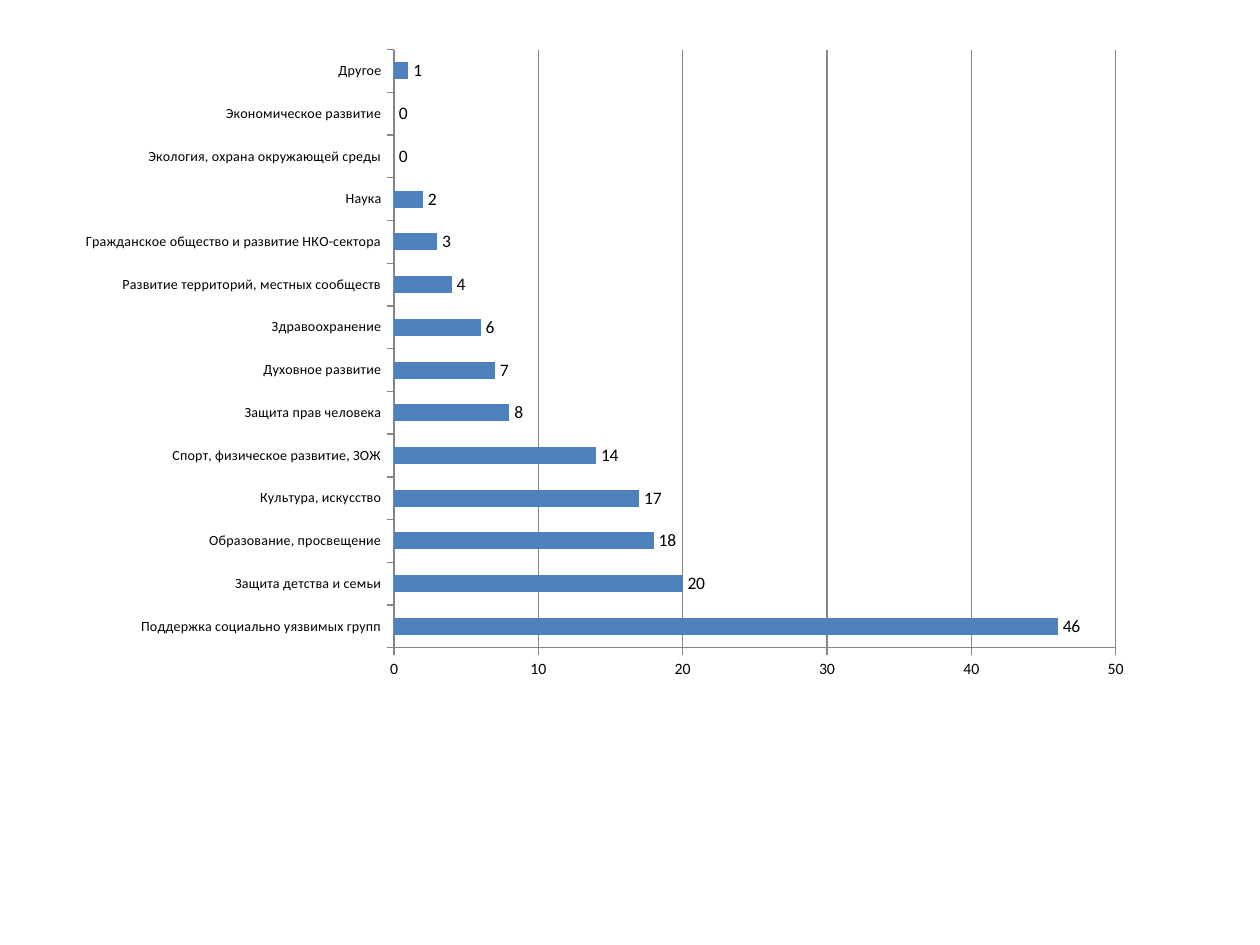
"""Build a slide with a bar chart of NGO activity areas."""
from typing import NamedTuple

from pptx import Presentation
from pptx.chart.data import CategoryChartData
from pptx.dml.color import RGBColor
from pptx.enum import chart as ch
from pptx.util import Inches, Pt

BLACK = RGBColor(0x00, 0x00, 0x00)
GRAY = RGBColor(0x86, 0x86, 0x86)
BLUE = RGBColor(0x4F, 0x81, 0xBD)
FONT = "Calibri"


class Area(NamedTuple):
    label: str
    count: int


AREAS = [
    Area("Поддержка социально уязвимых групп", 46),
    Area("Защита детства и семьи", 20),
    Area("Образование, просвещение", 18),
    Area("Культура, искусство", 17),
    Area("Спорт, физическое развитие, ЗОЖ", 14),
    Area("Защита прав человека", 8),
    Area("Духовное развитие", 7),
    Area("Здравоохранение", 6),
    Area("Развитие территорий, местных сообществ", 4),
    Area("Гражданское общество и развитие НКО-сектора", 3),
    Area("Наука", 2),
    Area("Экология, охрана окружающей среды", 0),
    Area("Экономическое развитие", 0),
    Area("Другое", 1),
]


def style_font(font, size: float) -> None:
    font.name = FONT
    font.size = Pt(size)
    font.bold = False
    font.color.rgb = BLACK


def style_line(line) -> None:
    line.color.rgb = GRAY
    line.width = Pt(0.75)


def style_axis(axis, size: float) -> None:
    axis.major_tick_mark = ch.XL_TICK_MARK.OUTSIDE
    axis.minor_tick_mark = ch.XL_TICK_MARK.NONE
    style_font(axis.tick_labels.font, size)
    style_line(axis.format.line)


def add_area_chart(slide, areas: list[Area]) -> None:
    data = CategoryChartData(number_format="General")
    data.categories = [area.label for area in areas]
    data.add_series("Series 1", [area.count for area in areas])
    chart = slide.shapes.add_chart(
        ch.XL_CHART_TYPE.BAR_CLUSTERED,
        Inches(0.51), Inches(0.29), Inches(8.58), Inches(5.2), data,
    ).chart
    chart.has_title = False
    chart.has_legend = False
    style_font(chart.font, 10)

    style_axis(chart.category_axis, 8)
    counts = chart.value_axis
    style_axis(counts, 9)
    counts.minimum_scale, counts.maximum_scale, counts.major_unit = 0, 50, 10
    counts.has_major_gridlines = True
    style_line(counts.major_gridlines.format.line)

    bars = chart.plots[0]
    bars.gap_width = 150
    bars.vary_by_categories = False
    fill = bars.series[0].format.fill
    fill.solid()
    fill.fore_color.rgb = BLUE

    labels = bars.series[0].data_labels
    labels.show_value = True
    labels.position = ch.XL_LABEL_POSITION.OUTSIDE_END
    style_font(labels.font, 10)


def main() -> None:
    deck = Presentation()
    deck.slide_width, deck.slide_height = Inches(10), Inches(7.5)
    slide = deck.slides.add_slide(deck.slide_layouts[6])
    add_area_chart(slide, AREAS)
    deck.save("out.pptx")


if __name__ == "__main__":
    main()
